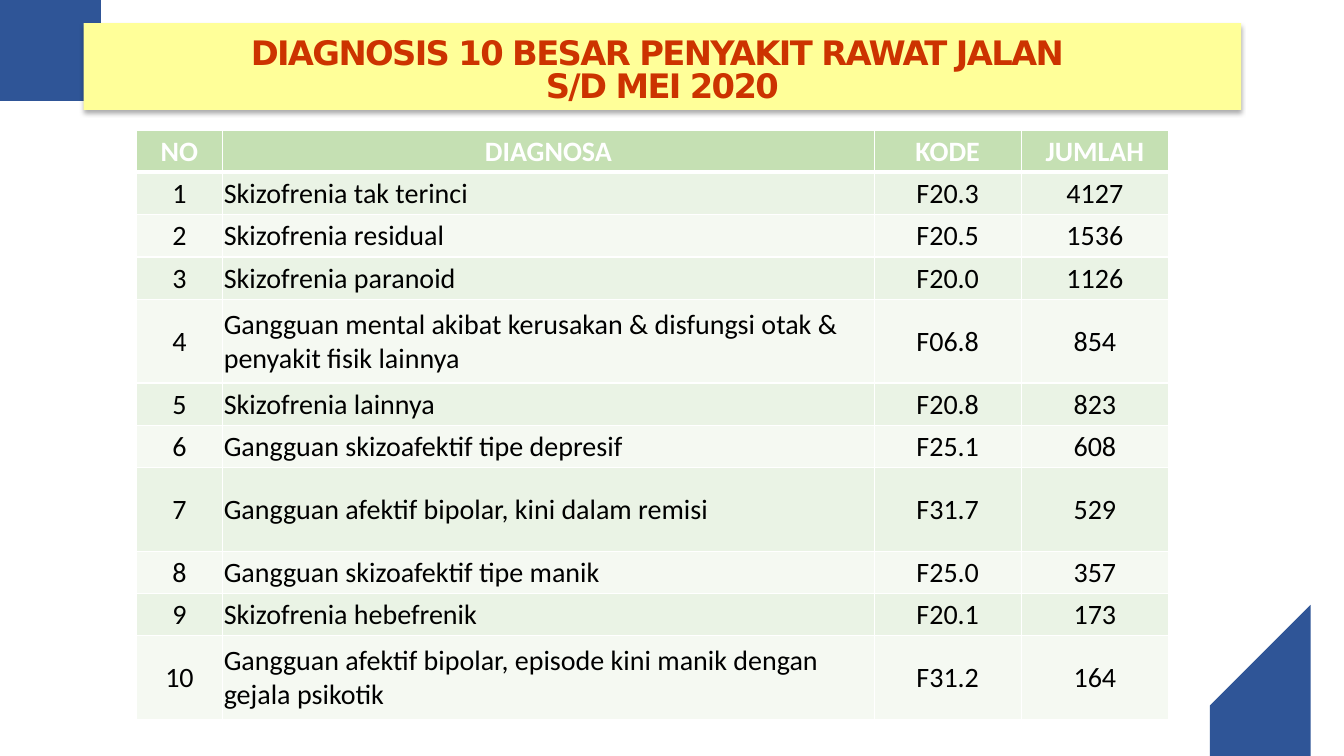
from typing import NamedTuple

from lxml.etree import SubElement
from pptx import Presentation
from pptx.dml.color import RGBColor
from pptx.enum.shapes import MSO_SHAPE
from pptx.enum.text import MSO_ANCHOR, PP_ALIGN
from pptx.oxml import parse_xml
from pptx.oxml.ns import nsdecls, qn
from pptx.util import Inches, Pt

Point = tuple[float, float]

WHITE = "FFFFFF"
BLUE = "2F5597"
HEADER_GREEN = "C5E0B3"
BANDS = ("EAF3E5", "F5F9F2")
HEADINGS = ("NO", "DIAGNOSA", "KODE", "JUMLAH")
COL_WIDTHS = (0.86, 6.46, 1.46, 1.46)
ROW_HEIGHT, TALL_ROW_HEIGHT = 0.42, 0.83


class Diagnosis(NamedTuple):
    name: str
    code: str
    count: int
    tall: bool = False


class Corner(NamedTuple):
    """Points before the rounded end, its two control points, its end, and the rest."""
    before: list[Point]
    controls: tuple[Point, Point]
    end: Point
    after: list[Point]


DIAGNOSES = [
    Diagnosis("Skizofrenia tak terinci", "F20.3", 4127),
    Diagnosis("Skizofrenia residual", "F20.5", 1536),
    Diagnosis("Skizofrenia paranoid", "F20.0", 1126),
    Diagnosis("Gangguan mental akibat kerusakan & disfungsi otak & "
              "penyakit fisik lainnya", "F06.8", 854, True),
    Diagnosis("Skizofrenia lainnya", "F20.8", 823),
    Diagnosis("Gangguan skizoafektif tipe depresif", "F25.1", 608),
    Diagnosis("Gangguan afektif bipolar, kini dalam remisi", "F31.7", 529, True),
    Diagnosis("Gangguan skizoafektif tipe manik", "F25.0", 357),
    Diagnosis("Skizofrenia hebefrenik", "F20.1", 173),
    Diagnosis("Gangguan afektif bipolar, episode kini manik dengan "
              "gejala psikotik", "F31.2", 164, True),
]

CORNERS = [
    Corner([(13.33, 7.5), (12.11, 7.5), (12.04, 7.36)],
           ((11.9, 7.06), (12.03, 6.69)), (12.34, 6.55), [(13.32, 6.09)]),
    Corner([(0, 0), (1.22, 0), (1.29, 0.15)],
           ((1.43, 0.46), (1.29, 0.83)), (0.99, 0.97), [(0, 1.42)]),
]


def rgb(color: str) -> RGBColor:
    return RGBColor.from_string(color)


def bezier(p0: Point, p1: Point, p2: Point, p3: Point, steps: int = 24) -> list[Point]:
    points = []
    for i in range(1, steps + 1):
        t = i / steps
        u = 1 - t
        points.append(tuple(u**3 * a + 3 * u * u * t * b + 3 * u * t * t * c + t**3 * d
                            for a, b, c, d in zip(p0, p1, p2, p3)))
    return points


def add_corner(slide, corner: Corner) -> None:
    curve = bezier(corner.before[-1], *corner.controls, corner.end)
    points = corner.before + curve + corner.after
    builder = slide.shapes.build_freeform(*points[0], scale=Inches(1))
    builder.add_line_segments(points[1:], close=True)
    s = builder.convert_to_shape()
    s.shadow.inherit = False
    s.fill.solid()
    s.fill.fore_color.rgb = rgb(BLUE)
    s.line.fill.background()


def add_drop_shadow(shape) -> None:
    shape.shadow.inherit = False
    effects = shape._element.spPr.find(qn("a:effectLst"))
    shadow = SubElement(effects, qn("a:outerShdw"), blurRad=str(Pt(3.5)),
                        dist=str(Pt(2.2)), dir="5400000", rotWithShape="0")
    color = SubElement(shadow, qn("a:srgbClr"), val="000000")
    SubElement(color, qn("a:alpha"), val="32000")


def add_title(slide) -> None:
    s = slide.shapes.add_shape(MSO_SHAPE.RECTANGLE, Inches(0.83), Inches(0.23),
                               Inches(11.48), Inches(0.86))
    s.fill.solid()
    s.fill.fore_color.rgb = rgb("FFFF99")
    s.line.fill.background()
    add_drop_shadow(s)
    tf = s.text_frame
    tf.text = "DIAGNOSIS 10 BESAR PENYAKIT RAWAT JALAN \vS/D MEI 2020"
    tf.vertical_anchor = MSO_ANCHOR.BOTTOM
    p = tf.paragraphs[0]
    p.alignment = PP_ALIGN.CENTER
    p.line_spacing = 0.8
    for r in p.runs:
        r.font.name = "DejaVu Sans"
        r.font.size = Pt(24.1)
        r.font.bold = True
        r.font.color.rgb = rgb("CC3300")
        r._r.get_or_add_rPr().set("spc", "-120")


def set_borders(cell, top: float, bottom: float) -> None:
    """Draw white cell borders; top and bottom are widths in points."""
    tc_pr = cell._tc.get_or_add_tcPr()
    for i, (side, width) in enumerate({"L": 1, "R": 1, "T": top, "B": bottom}.items()):
        tc_pr.insert(i, parse_xml(
            f'<a:ln{side} {nsdecls("a")} w="{Pt(width)}"><a:solidFill>'
            f'<a:srgbClr val="{WHITE}"/></a:solidFill></a:ln{side}>'))


def fill_cell(cell, text: str, fill: str, color: str, bold: bool, align: PP_ALIGN) -> None:
    cell.fill.solid()
    cell.fill.fore_color.rgb = rgb(fill)
    cell.vertical_anchor = MSO_ANCHOR.MIDDLE
    cell.margin_left = cell.margin_right = cell.margin_top = Inches(0.01)
    cell.margin_bottom = 0
    cell.text_frame.text = text
    p = cell.text_frame.paragraphs[0]
    p.alignment = align
    font = p.runs[0].font
    font.name = "Calibri"
    font.size = Pt(20)
    font.bold = bold
    font.color.rgb = rgb(color)


def add_diagnosis_table(slide) -> None:
    heights = [ROW_HEIGHT] + [TALL_ROW_HEIGHT if d.tall else ROW_HEIGHT for d in DIAGNOSES]
    rows = [HEADINGS] + [(str(n), d.name, d.code, str(d.count))
                         for n, d in enumerate(DIAGNOSES, 1)]
    table = slide.shapes.add_table(len(rows), len(COL_WIDTHS), Inches(1.35), Inches(1.29),
                                   Inches(sum(COL_WIDTHS)), Inches(sum(heights))).table
    for column, width in zip(table.columns, COL_WIDTHS):
        column.width = Inches(width)
    for i, (values, height) in enumerate(zip(rows, heights)):
        table.rows[i].height = Inches(height)
        header = i == 0
        fill = HEADER_GREEN if header else BANDS[(i - 1) % 2]
        for j, value in enumerate(values):
            cell = table.cell(i, j)
            align = PP_ALIGN.LEFT if j == 1 and not header else PP_ALIGN.CENTER
            fill_cell(cell, value, fill, WHITE if header else "000000", header, align)
            set_borders(cell, top=3 if i == 1 else 1, bottom=3 if header else 1)


def main() -> None:
    prs = Presentation()
    prs.slide_width, prs.slide_height = Inches(13.33), Inches(7.5)
    slide = prs.slides.add_slide(prs.slide_layouts[6])
    for corner in CORNERS:
        add_corner(slide, corner)
    add_title(slide)
    add_diagnosis_table(slide)
    prs.save("out.pptx")


if __name__ == "__main__":
    main()
